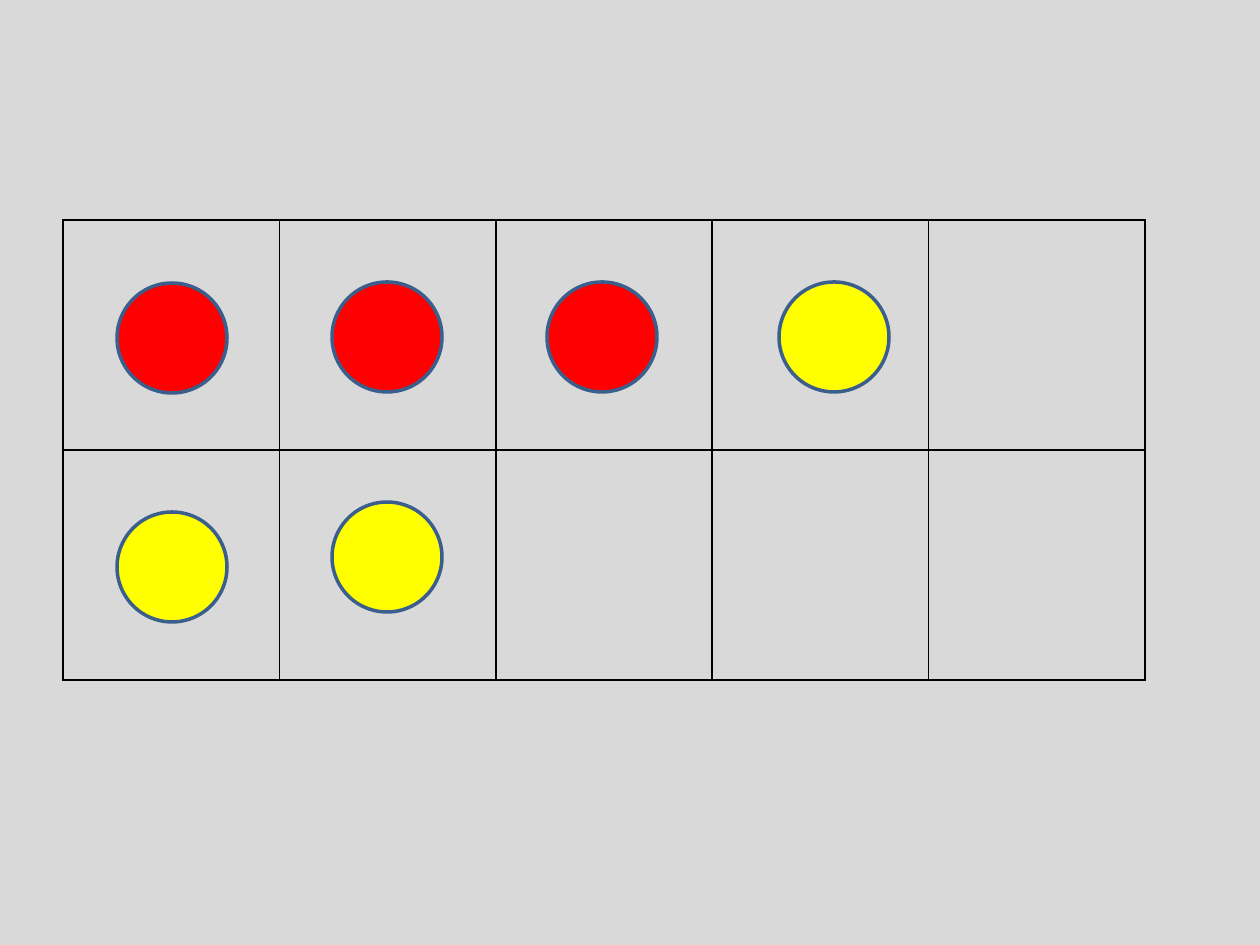
"""Build a ten-frame slide with red and yellow counters."""
from lxml.etree import SubElement
from pptx import Presentation
from pptx.dml.color import RGBColor
from pptx.enum.shapes import MSO_SHAPE as Shape
from pptx.oxml.ns import qn
from pptx.util import Emu, Pt

EMU_PER_PX = 914400 / 126
ROWS, COLUMNS = 2, 5
FRAME = (63, 220, 1082, 460)
COUNTER_SIZE = 110
BACKGROUND, BORDER, OUTLINE = "D9D9D9", "000000", "3A5F8C"
RED, YELLOW = "FF0000", "FFFF00"
COUNTERS = [
    (117, 283, RED),
    (547, 282, RED),
    (332, 282, RED),
    (117, 512, YELLOW),
    (779, 282, YELLOW),
    (332, 502, YELLOW),
]


def px(length):
    """Turn pixels into EMU."""
    return Emu(round(length * EMU_PER_PX))


def color(value):
    """Turn a hex string into a colour."""
    return RGBColor.from_string(value)


def add_borders(cell, value, points):
    """Draw a solid line on each side of a cell."""
    properties = cell._tc.get_or_add_tcPr()
    for side in ("a:lnL", "a:lnR", "a:lnT", "a:lnB"):
        line = SubElement(properties, qn(side), w=str(Pt(points)))
        fill = SubElement(line, qn("a:solidFill"))
        SubElement(fill, qn("a:srgbClr"), val=value)


def add_frame(page):
    """Add the empty grid that holds the counters."""
    left, top, width, height = map(px, FRAME)
    table = page.shapes.add_table(ROWS, COLUMNS, left, top, width, height).table
    table.first_row = table.horz_banding = False
    for cell in table.iter_cells():
        add_borders(cell, BORDER, 1)
        cell.fill.background()


def add_counter(page, left, top, fill):
    """Add one round counter."""
    size = px(COUNTER_SIZE)
    counter = page.shapes.add_shape(Shape.OVAL, px(left), px(top), size, size)
    counter.shadow.inherit = False
    counter.fill.solid()
    counter.fill.fore_color.rgb = color(fill)
    counter.line.color.rgb = color(OUTLINE)
    counter.line.width = Pt(2)


def main():
    """Build and save the deck."""
    deck = Presentation()
    deck.slide_width, deck.slide_height = px(1260), px(945)
    page = deck.slides.add_slide(deck.slide_layouts[6])
    page.background.fill.solid()
    page.background.fill.fore_color.rgb = color(BACKGROUND)
    add_frame(page)
    for left, top, fill in COUNTERS:
        add_counter(page, left, top, fill)
    deck.save("out.pptx")


if __name__ == "__main__":
    main()
